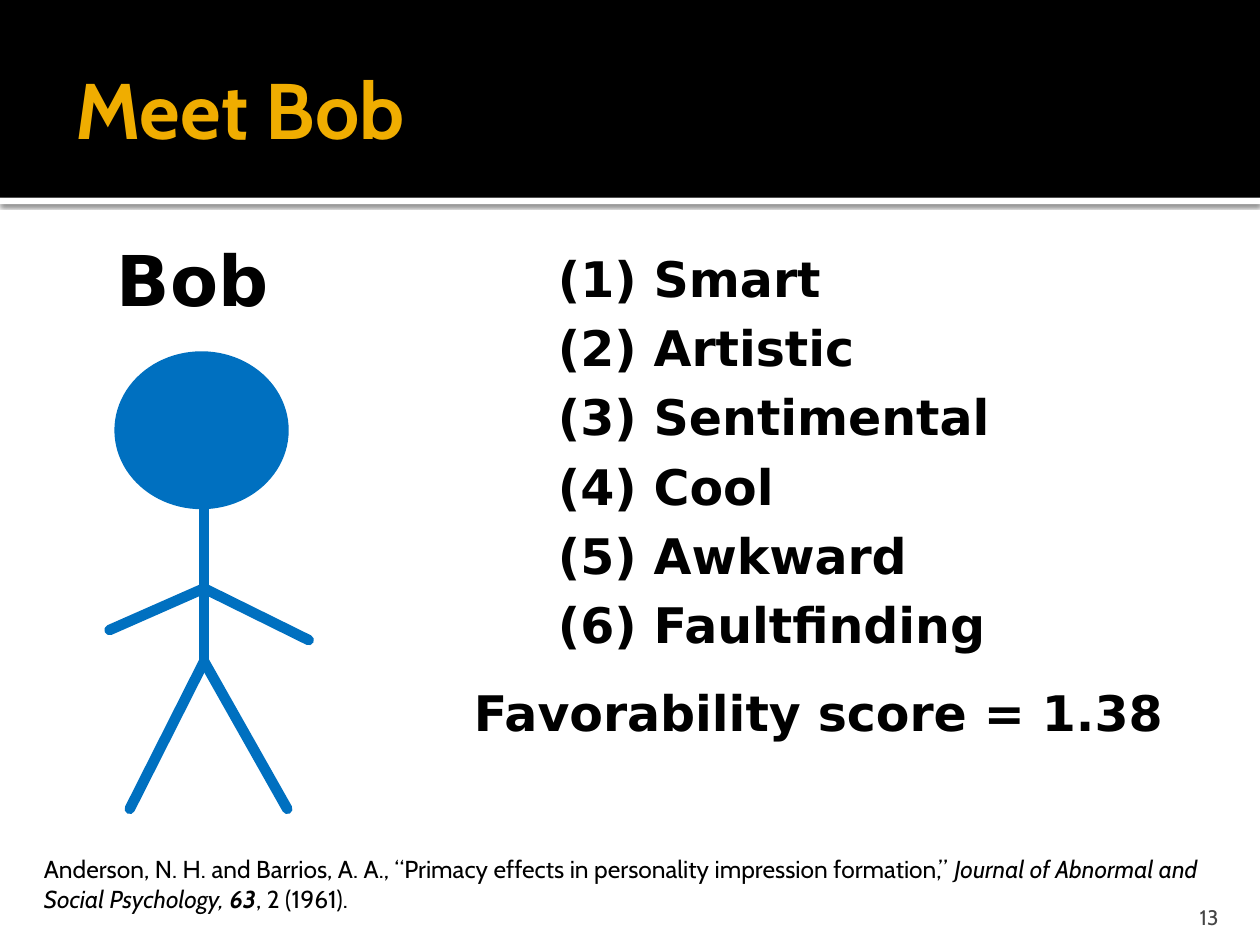
"""Build the Meet Bob slide: a stick figure beside six traits and their score."""
import lxml.etree
import pptx
import pptx.dml.color
import pptx.enum.shapes
import pptx.enum.text
import pptx.oxml.ns
import pptx.util

HEADING = "Meet Bob"
PERSON = "Bob"
TRAITS = ["Smart", "Artistic", "Sentimental", "Cool", "Awkward", "Faultfinding"]
SCORE = "Favorability score = 1.38"
CITATION = [
    ("Anderson, N. H. and Barrios, A. A., “Primacy effects in personality impression formation,” ", {}),
    ("Journal of Abnormal and Social Psychology, ", {"italic": True}),
    ("63", {"italic": True, "bold": True}),
    (", 2 (1961).", {}),
]
PAGE = "13"

THEME = {
    "black": "000000", "white": "FFFFFF", "gold": "F0AD00", "gray": "454545", "blue": "0070C0",
    "sans": "Cabin", "strong": "DejaVu Sans",
    "heading": 45, "person": 40, "trait": 28, "note": 14, "page": 12, "stroke": 6,
}

CELL = 1 / 12
BAND_ROWS = 18.84
HEAD = (11.4, 34, 15.6, 14)
NECK, SHOULDER, HIP = (19.4, 47), (19.4, 56), (19.4, 63)
LIMBS = [
    (NECK, HIP),
    (HIP, (12.4, 77)), (HIP, (27.4, 77)),
    (SHOULDER, (10.4, 60)), (SHOULDER, (29.4, 61)),
]

ANCHOR = pptx.enum.text.MSO_ANCHOR
ALIGN = pptx.enum.text.PP_ALIGN
SHAPE = pptx.enum.shapes.MSO_SHAPE


def grid(*cells):
    return [pptx.util.Inches(round(cell * CELL, 2)) for cell in cells]


def color(name):
    return pptx.dml.color.RGBColor.from_string(THEME[name])


def add_text(slide, place, paragraphs, size, font="sans", ink="black", bold=False, align=ALIGN.LEFT,
             anchor=ANCHOR.TOP, insets=(0.1, 0.05, 0.1, 0.05), after=0, wrap=True):
    frame = slide.shapes.add_textbox(*grid(*place)).text_frame
    frame.word_wrap = wrap
    frame.vertical_anchor = anchor
    frame.margin_left, frame.margin_top, frame.margin_right, frame.margin_bottom = map(pptx.util.Inches, insets)
    for index, pieces in enumerate(paragraphs):
        paragraph = frame.paragraphs[0] if index == 0 else frame.add_paragraph()
        paragraph.alignment = align
        paragraph.space_after = pptx.util.Pt(after)
        for words, style in [(pieces, {})] if isinstance(pieces, str) else pieces:
            run = paragraph.add_run()
            run.text = words
            run.font.name = THEME[font]
            run.font.size = pptx.util.Pt(THEME[size])
            run.font.color.rgb = color(ink)
            run.font.bold = style.get("bold", bold)
            run.font.italic = style.get("italic", False)


def add_solid(slide, kind, place, fill):
    solid = slide.shapes.add_shape(kind, *grid(*place))
    solid.shadow.inherit = False
    solid.fill.solid()
    solid.fill.fore_color.rgb = color(fill)
    solid.line.fill.background()
    return solid


def add_stroke(line):
    line.color.rgb = color("blue")
    line.width = pptx.util.Pt(THEME["stroke"])


def cast_shadow(solid):
    effects = solid.element.spPr.find(pptx.oxml.ns.qn("a:effectLst"))
    shadow = lxml.etree.SubElement(effects, pptx.oxml.ns.qn("a:outerShdw"), blurRad=str(pptx.util.Pt(2.5)),
                                   dist=str(pptx.util.Pt(0.8)), dir="5400000", algn="tl", rotWithShape="0")
    tint = lxml.etree.SubElement(shadow, pptx.oxml.ns.qn("a:srgbClr"), val=THEME["black"])
    lxml.etree.SubElement(tint, pptx.oxml.ns.qn("a:alpha"), val="60000")


def draw_band(slide):
    cast_shadow(add_solid(slide, SHAPE.RECTANGLE, (0, BAND_ROWS, 120, 0.6), "white"))
    add_solid(slide, SHAPE.RECTANGLE, (0, 0, 120, BAND_ROWS), "black")


def draw_figure(slide):
    add_stroke(add_solid(slide, SHAPE.OVAL, HEAD, "blue").line)
    for start, end in LIMBS:
        limb = slide.shapes.add_connector(pptx.enum.shapes.MSO_CONNECTOR.STRAIGHT, *grid(*start, *end))
        add_stroke(limb.line)
        limb.line._get_or_add_ln().set("cap", "rnd")
        lxml.etree.SubElement(limb.element.spPr, pptx.oxml.ns.qn("a:effectLst"))


def main():
    deck = pptx.Presentation()
    deck.slide_width, deck.slide_height = grid(120, 90)
    slide = deck.slides.add_slide(deck.slide_layouts[6])
    draw_band(slide)
    add_text(slide, (6, 2, 108, 16.4), [HEADING], "heading", ink="gold", bold=True,
             anchor=ANCHOR.MIDDLE, insets=(0.1, 0.05, 0.05, 0.05))
    add_text(slide, (107.6, 85, 9.6, 3.6), [PAGE], "page", ink="gray", align=ALIGN.RIGHT,
             anchor=ANCHOR.BOTTOM, insets=(0.1, 0.05, 0.1, 0))
    draw_figure(slide)
    add_text(slide, (10, 22, 17, 9.2), [PERSON], "person", font="strong", bold=True, wrap=False)
    traits = [f"({rank}) {trait}" for rank, trait in enumerate(TRAITS, 1)]
    add_text(slide, (52, 23, 60, 40.2), traits, "trait", font="strong", bold=True, after=6)
    add_text(slide, (40, 64.4, 76, 12.5), [SCORE], "trait", font="strong", bold=True, align=ALIGN.CENTER)
    add_text(slide, (3, 80.8, 114, 7.2), [CITATION], "note")
    deck.save("out.pptx")


if __name__ == "__main__":
    main()
